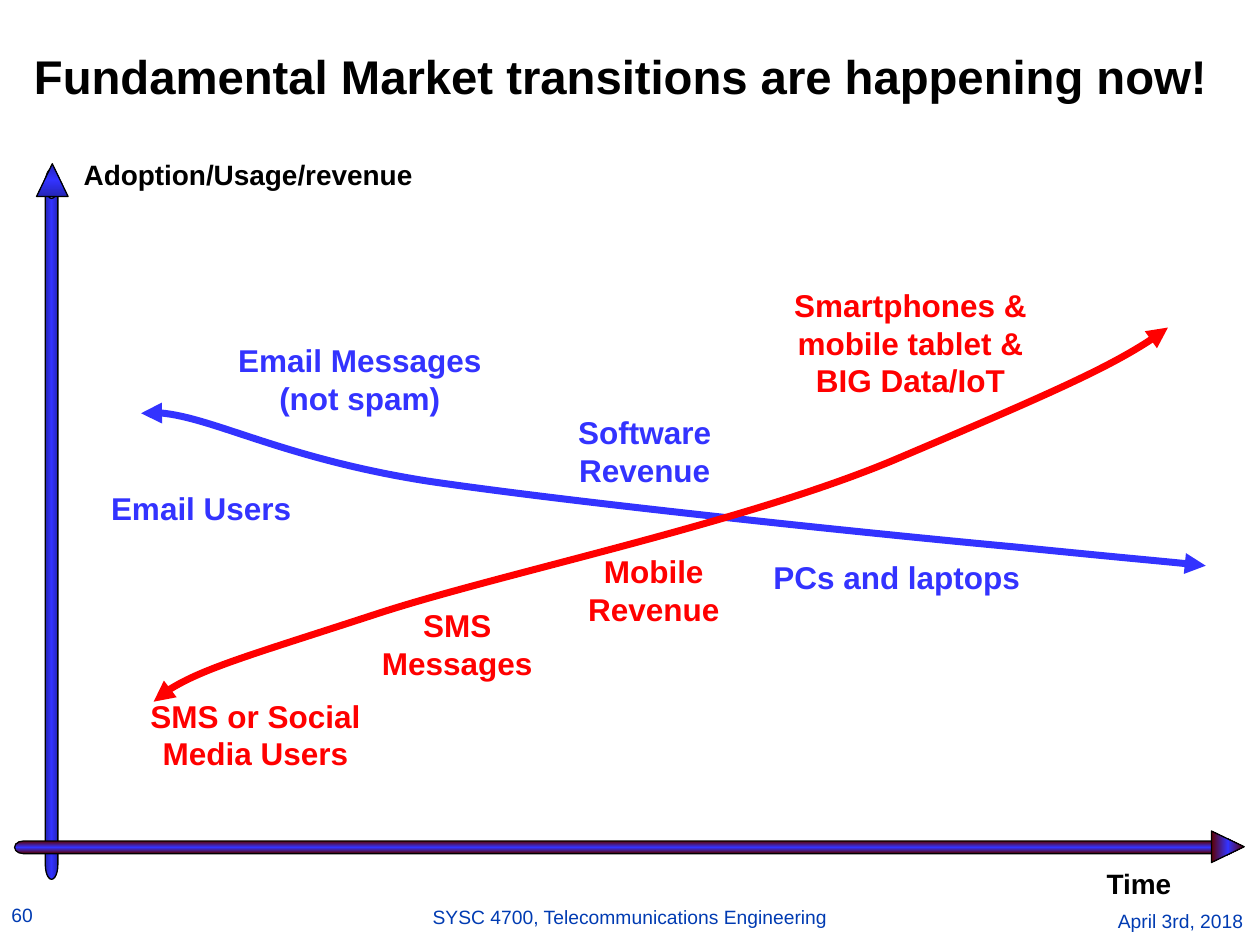
"""Build the market transitions slide: two crossing adoption curves over time."""
from copy import deepcopy

from lxml import etree
from pptx import Presentation
from pptx.dml.color import RGBColor
from pptx.enum import shapes, text
from pptx.oxml.ns import qn
from pptx.util import Pt

COLORS = {"black": "000000", "old": "3333FF", "new": "FF0000", "footer": "003BB2",
          "navy": "2424B6", "maroon": "5E0000"}
LEFT, CENTER, RIGHT = text.PP_ALIGN.LEFT, text.PP_ALIGN.CENTER, text.PP_ALIGN.RIGHT
TOP, BOTTOM = text.MSO_ANCHOR.TOP, text.MSO_ANCHOR.BOTTOM


def rgb(name):
    return RGBColor.from_string(COLORS[name])


def write(frame, words, size=18, color="black", bold=True, align=CENTER,
          anchor=BOTTOM, inset=(0, 0), wrap=True, spacing=None):
    frame.word_wrap = wrap
    frame.vertical_anchor = anchor
    frame.margin_left = frame.margin_right = Pt(inset[0])
    frame.margin_top = frame.margin_bottom = Pt(inset[1])
    paragraph = frame.paragraphs[0]
    paragraph.alignment = align
    if spacing:
        paragraph.line_spacing = spacing
    run = paragraph.add_run()
    run.text = words
    run.font.name, run.font.size, run.font.bold = "Arial", Pt(size), bold
    run.font.color.rgb = rgb(color)


class MarketSlide:
    def __init__(self, slide, axis_line=0.75, curve_line=4):
        self.shapes = slide.shapes
        self.axis_line = axis_line
        self.curve_line = curve_line

    def label(self, box, words, **style):
        frame = self.shapes.add_textbox(*map(Pt, box)).text_frame
        write(frame, words, **style)

    def axis(self, shaft, tip, edge, roundness, rotation=0):
        group = self.shapes.add_group_shape()
        parts = ((shapes.MSO_SHAPE.CAN, shaft, roundness, 0),
                 (shapes.MSO_SHAPE.ISOSCELES_TRIANGLE, tip, 0.5, 90))
        for kind, box, adjustment, angle in parts:
            part = group.shapes.add_shape(kind, *map(Pt, box))
            part.adjustments[0] = adjustment
            part.rotation = rotation
            part.shadow.inherit = False
            part.line.color.rgb = rgb("black")
            part.line.width = Pt(self.axis_line)
            self.shade(part, edge, angle)

    def shade(self, part, edge, angle):
        part.fill.gradient()
        part.fill.gradient_angle = angle
        stops = part._element.spPr.find(".//" + qn("a:gsLst"))
        stops.append(deepcopy(stops[0]))
        for index, stop in enumerate(part.fill.gradient_stops):
            stop.position = index / 2
            stop.color.rgb = rgb("old" if index == 1 else edge)

    def curve(self, points, color):
        start, *controls = [(Pt(x), Pt(y)) for x, y in points]
        builder = self.shapes.build_freeform(*start)
        builder.add_line_segments(controls, close=False)
        trend = builder.convert_to_shape()
        trend.shadow.inherit = False
        trend.fill.background()
        trend.line.color.rgb = rgb(color)
        trend.line.width = Pt(self.curve_line)
        path = trend._element.spPr.find(".//" + qn("a:path"))
        segments = path.findall(qn("a:lnTo"))
        for first in range(0, len(segments), 3):
            bezier = etree.SubElement(path, qn("a:cubicBezTo"))
            for segment in segments[first:first + 3]:
                bezier.append(segment[0])
                path.remove(segment)
        outline = trend._element.spPr.find(qn("a:ln"))
        for end in ("a:headEnd", "a:tailEnd"):
            etree.SubElement(outline, qn(end), type="triangle")


def main():
    deck = Presentation()
    deck.slide_width, deck.slide_height = Pt(720), Pt(540)
    market = MarketSlide(deck.slides.add_slide(deck.slide_layouts[6]))

    footer = dict(size=11, color="footer", bold=False, anchor=TOP)
    market.label((525, 519.8, 192, 13), "April 3rd, 2018", align=RIGHT, inset=(6.5, 0), **footer)
    market.label((239, 514, 242, 20), "SYSC 4700, Telecommunications Engineering",
                 inset=(6.5, 3.6), wrap=False, **footer)
    market.label((0, 516.2, 192, 13), "60", align=LEFT, inset=(6.5, 0), **footer)
    market.label((15.8, 31, 692.6, 28.8), "Fundamental Market transitions are happening now!",
                 size=27, align=LEFT, anchor=TOP, inset=(3.6, 0), spacing=0.89)

    market.axis((25.9, 96.5, 7.2, 406), (20.9, 93.6, 18, 18.7), "navy", 2.35)
    market.label((31.7, 86.4, 220.3, 23), "Adoption/Usage/revenue", size=16)
    market.curve([(80.6, 236.2), (109.4, 231.8), (162, 262.1), (244.8, 275),
                  (328.3, 287.3), (493.9, 304.6), (578.9, 312.5),
                  (650.9, 319.7), (661.7, 320.4), (689, 323.3)], "old")
    market.curve([(87.8, 401), (103.7, 385.2), (145.4, 373.7), (216, 350.6),
                  (286.6, 327.6), (425.5, 298.8), (511.2, 262.8),
                  (597.6, 226.1), (643.7, 205.9), (667.4, 187.2)], "new")
    market.axis((352.8, 136.1, 7.2, 696.2), (692.6, 474.5, 18, 18.7), "maroon", 1.38, rotation=90)
    market.label((613.4, 491.8, 75, 22.3), "Time", size=16)

    trends = [
        (82, 407.5, 128, "SMS or Social Media Users", "new"),
        (51, 267.1, 128, "Email Users", "old"),
        (134.6, 204.5, 142, "Email Messages (not spam)", "old"),
        (197.3, 355.7, 128, "SMS Messages", "new"),
        (297.4, 245.5, 142, "Software Revenue", "old"),
        (309.6, 324.7, 128, "Mobile Revenue", "new"),
        (441.4, 306.7, 142, "PCs and laptops", "old"),
        (441.4, 194.4, 157.7, "Smartphones & mobile tablet & BIG Data/IoT", "new"),
    ]
    for left, top, width, words, color in trends:
        market.label((left, top, width, 33.8), words, color=color)

    deck.save("out.pptx")


if __name__ == "__main__":
    main()
